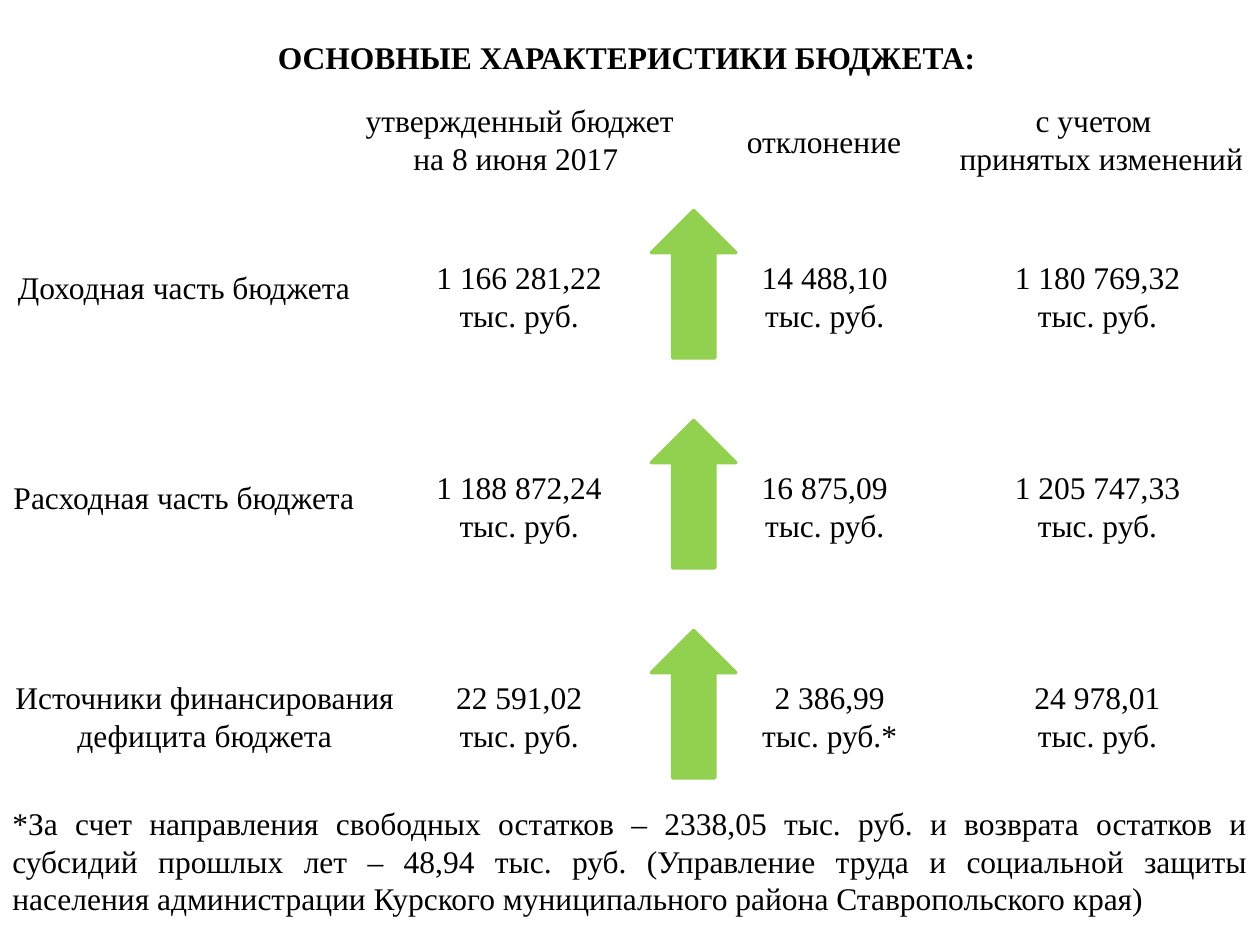
from pptx import Presentation
from pptx.dml.color import RGBColor
from pptx.enum.shapes import MSO_SHAPE
from pptx.enum.text import MSO_AUTO_SIZE, PP_ALIGN
from pptx.util import Inches, Pt

# Content
TITLE = "ОСНОВНЫЕ ХАРАКТЕРИСТИКИ БЮДЖЕТА:"
# text, left, top, width, height
HEADINGS = [
    ("утвержденный бюджет на 8 июня 2017 ", 2.75, 0.75, 2.75, 0.71),
    ("отклонение", 5.75, 0.92, 1.58, 0.4),
    ("с учетом \n принятых изменений", 7.42, 0.75, 2.58, 0.71),
]
# label, (top offset, width, height) of label, approved, deviation, deviation width, amended
ROWS = [
    ("Доходная часть бюджета", (0.08, 2.92, 0.4),
     "1 166 281,22\nтыс. руб.", "14 488,10 тыс. руб.", 1.25, "1 180 769,32\nтыс. руб."),
    ("Расходная часть бюджета", (0.08, 2.92, 0.4),
     "1 188 872,24\nтыс. руб.", "16 875,09 тыс. руб.", 1.25, "1 205 747,33\nтыс. руб."),
    ("Источники финансирования дефицита бюджета", (0, 3.25, 0.71),
     "22 591,02\nтыс. руб.", "2 386,99 тыс. руб.*", 1.33, "24 978,01\nтыс. руб."),
]
FOOTNOTE = (
    "*За счет направления свободных остатков – 2338,05 тыс. руб. и возврата "
    "остатков и субсидий прошлых лет – 48,94 тыс. руб. (Управление труда и "
    "социальной защиты населения администрации Курского муниципального района "
    "Ставропольского края)"
)

THEME = {
    "font": "Times New Roman",
    "size": Pt(18),
    "text": RGBColor(0x00, 0x00, 0x00),
    "arrow": RGBColor(0x92, 0xD0, 0x50),
    "arrow_line": Pt(2),
}

# Grid, in inches
FIRST_ROW, ROW_STEP = 2, 5 / 3
APPROVED_LEFT, DEVIATION_LEFT, AMENDED_LEFT = 3.33, 5.92, 7.92
AMOUNT_WIDTH, AMOUNT_HEIGHT = 1.58, 0.71
ARROW_LEFT, ARROW_RISE, ARROW_WIDTH, ARROW_HEIGHT = 5.17, 0.33, 0.67, 1.17


def add_text(slide, text, left, top, width, height,
             align=PP_ALIGN.CENTER, bold=False, wrap=True):
    box = slide.shapes.add_textbox(*map(Inches, (left, top, width, height)))
    frame = box.text_frame
    frame.text = text
    frame.word_wrap = wrap
    frame.auto_size = MSO_AUTO_SIZE.SHAPE_TO_FIT_TEXT
    for paragraph in frame.paragraphs:
        paragraph.alignment = align
        for run in paragraph.runs:
            run.font.name = THEME["font"]
            run.font.size = THEME["size"]
            run.font.color.rgb = THEME["text"]
            run.font.bold = bold


def add_growth_arrow(slide, top):
    arrow = slide.shapes.add_shape(
        MSO_SHAPE.DOWN_ARROW,
        *map(Inches, (ARROW_LEFT, top, ARROW_WIDTH, ARROW_HEIGHT)))
    arrow.rotation = 180
    arrow.shadow.inherit = False
    arrow.fill.solid()
    arrow.fill.fore_color.rgb = THEME["arrow"]
    arrow.line.color.rgb = THEME["arrow"]
    arrow.line.width = THEME["arrow_line"]


def main():
    deck = Presentation()
    deck.slide_width, deck.slide_height = Inches(10), Inches(7.5)
    slide = deck.slides.add_slide(deck.slide_layouts[6])

    # Title and column headings
    add_text(slide, TITLE, 2.08, 0.25, 5.79, 0.4, bold=True, wrap=False)
    for heading in HEADINGS:
        add_text(slide, *heading)

    # Budget rows
    for index, (label, label_box, approved, deviation, deviation_width, amended) in enumerate(ROWS):
        top = FIRST_ROW + index * ROW_STEP
        label_offset, label_width, label_height = label_box
        add_text(slide, label, 0, top + label_offset, label_width, label_height)
        add_text(slide, approved, APPROVED_LEFT, top, AMOUNT_WIDTH, AMOUNT_HEIGHT)
        add_growth_arrow(slide, top - ARROW_RISE)
        add_text(slide, deviation, DEVIATION_LEFT, top, deviation_width, AMOUNT_HEIGHT)
        add_text(slide, amended, AMENDED_LEFT, top, AMOUNT_WIDTH, AMOUNT_HEIGHT)

    # Footnote
    add_text(slide, FOOTNOTE, 0, 6.33, 10, 1.01, align=PP_ALIGN.JUSTIFY)

    deck.save("out.pptx")


if __name__ == "__main__":
    main()
